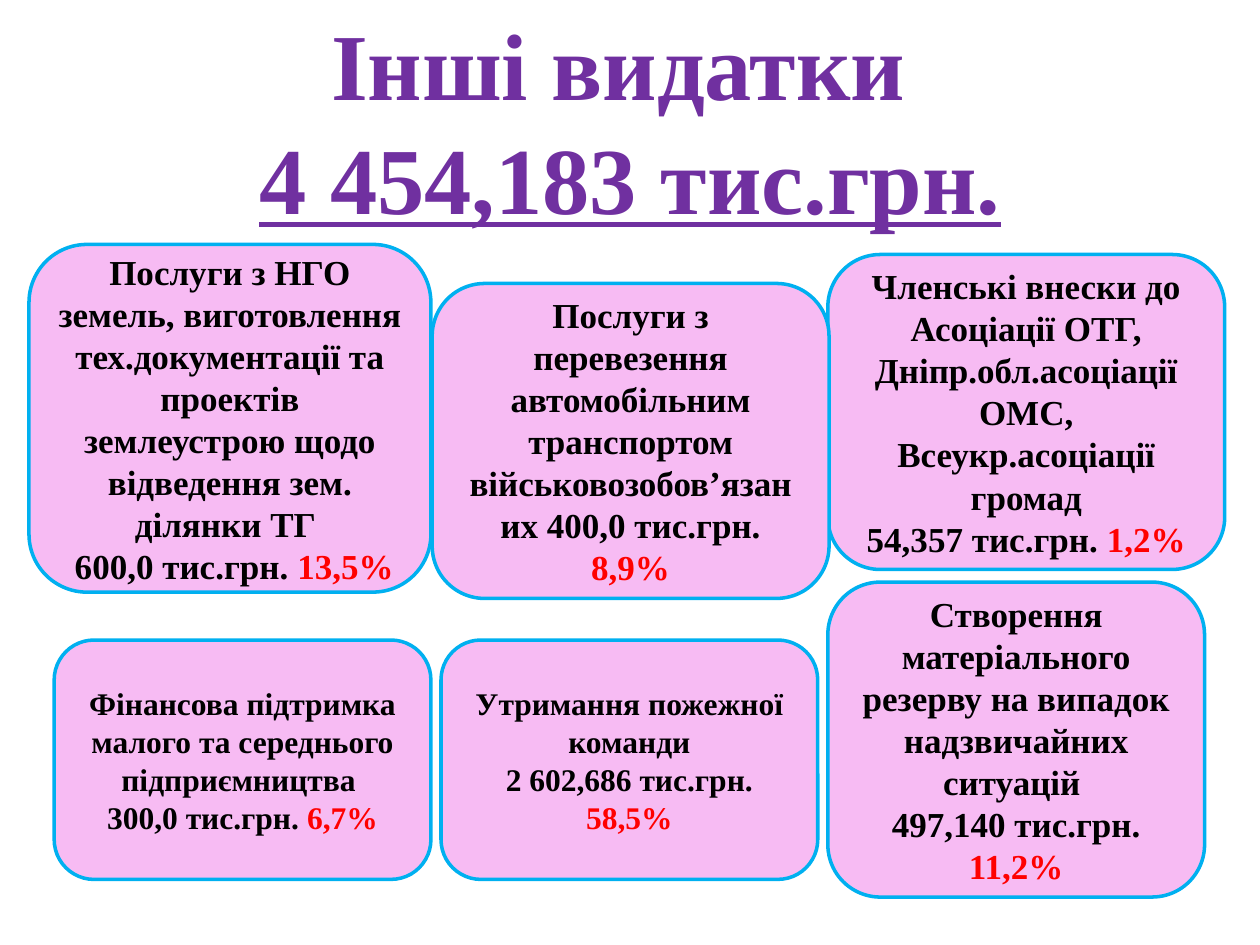
from dataclasses import dataclass

from pptx import Presentation
from pptx.dml.color import RGBColor
from pptx.enum.shapes import MSO_SHAPE
from pptx.enum.text import MSO_ANCHOR, PP_ALIGN
from pptx.slide import Slide
from pptx.util import Inches, Pt


@dataclass(frozen=True)
class Theme:
    font: str = "Times New Roman"
    title: RGBColor = RGBColor(0x70, 0x30, 0xA0)
    text: RGBColor = RGBColor(0x00, 0x00, 0x00)
    share: RGBColor = RGBColor(0xFF, 0x00, 0x00)
    fill: RGBColor = RGBColor(0xF7, 0xBB, 0xF3)
    line: RGBColor = RGBColor(0x00, 0xB0, 0xF0)
    title_size: int = 54
    large: int = 20
    small: int = 18


THEME = Theme()


@dataclass(frozen=True)
class Card:
    left: float
    top: float
    width: float
    height: float
    lines: tuple[str, ...]
    share: str
    size: int = THEME.large


CARDS = [
    Card(0.23, 1.94, 3.19, 2.76,
         ("Послуги з НГО земель, виготовлення тех.документації та проектів "
          "землеустрою щодо відведення зем. ділянки ТГ ",
          " 600,0 тис.грн. "), "13,5%"),
    Card(6.57, 2.02, 3.15, 2.5,
         ("Членські внески до Асоціації ОТГ, Дніпр.обл.асоціації ОМС, "
          "Всеукр.асоціації громад",
          "54,357 тис.грн. "), "1,2%"),
    Card(0.43, 5.08, 2.99, 1.9,
         ("Фінансова підтримка малого та середнього підприємництва ",
          "300,0 тис.грн. "), "6,7%", THEME.small),
    Card(6.57, 4.62, 2.99, 2.5,
         ("Створення матеріального резерву на випадок надзвичайних ситуацій ",
          "497,140 тис.грн. "), "11,2%"),
    Card(3.43, 2.25, 3.15, 2.5,
         ("Послуги з перевезення автомобільним транспортом "
          "військовозобов’язаних 400,0 тис.грн. ",), "8,9%"),
    Card(3.5, 5.08, 2.99, 1.9,
         ("Утримання пожежної команди",
          "2 602,686 тис.грн. "), "58,5%", THEME.small),
]


def write_lines(tf, lines: tuple[str, ...], size: int, color: RGBColor):
    """Fill the frame with centred bold paragraphs and return the last one."""
    tf.word_wrap = True
    for i, line in enumerate(lines):
        p = tf.add_paragraph() if i else tf.paragraphs[0]
        p.alignment = PP_ALIGN.CENTER
        p.font.name = THEME.font
        p.font.size = Pt(size)
        p.font.bold = True
        p.font.color.rgb = color
        p.add_run().text = line
    return p


def add_title(s: Slide, lines: tuple[str, ...]) -> None:
    sp = s.shapes.add_textbox(Inches(0), Inches(0), Inches(10), Inches(1.92))
    p = write_lines(sp.text_frame, lines, THEME.title_size, THEME.title)
    p.font.underline = True


def add_card(s: Slide, card: Card) -> None:
    sp = s.shapes.add_shape(
        MSO_SHAPE.ROUNDED_RECTANGLE, Inches(card.left), Inches(card.top),
        Inches(card.width), Inches(card.height))
    sp.shadow.inherit = False
    sp.fill.solid()
    sp.fill.fore_color.rgb = THEME.fill
    sp.line.color.rgb = THEME.line
    sp.line.width = Pt(2)
    tf = sp.text_frame
    tf.vertical_anchor = MSO_ANCHOR.MIDDLE
    r = write_lines(tf, card.lines, card.size, THEME.text).add_run()
    r.text = card.share
    r.font.color.rgb = THEME.share


def main() -> None:
    prs = Presentation()
    prs.slide_width, prs.slide_height = Inches(10), Inches(7.5)
    s = prs.slides.add_slide(prs.slide_layouts[6])
    add_title(s, ("Інші видатки ", "4 454,183 тис.грн."))
    for card in CARDS:
        add_card(s, card)
    prs.save("out.pptx")


if __name__ == "__main__":
    main()
